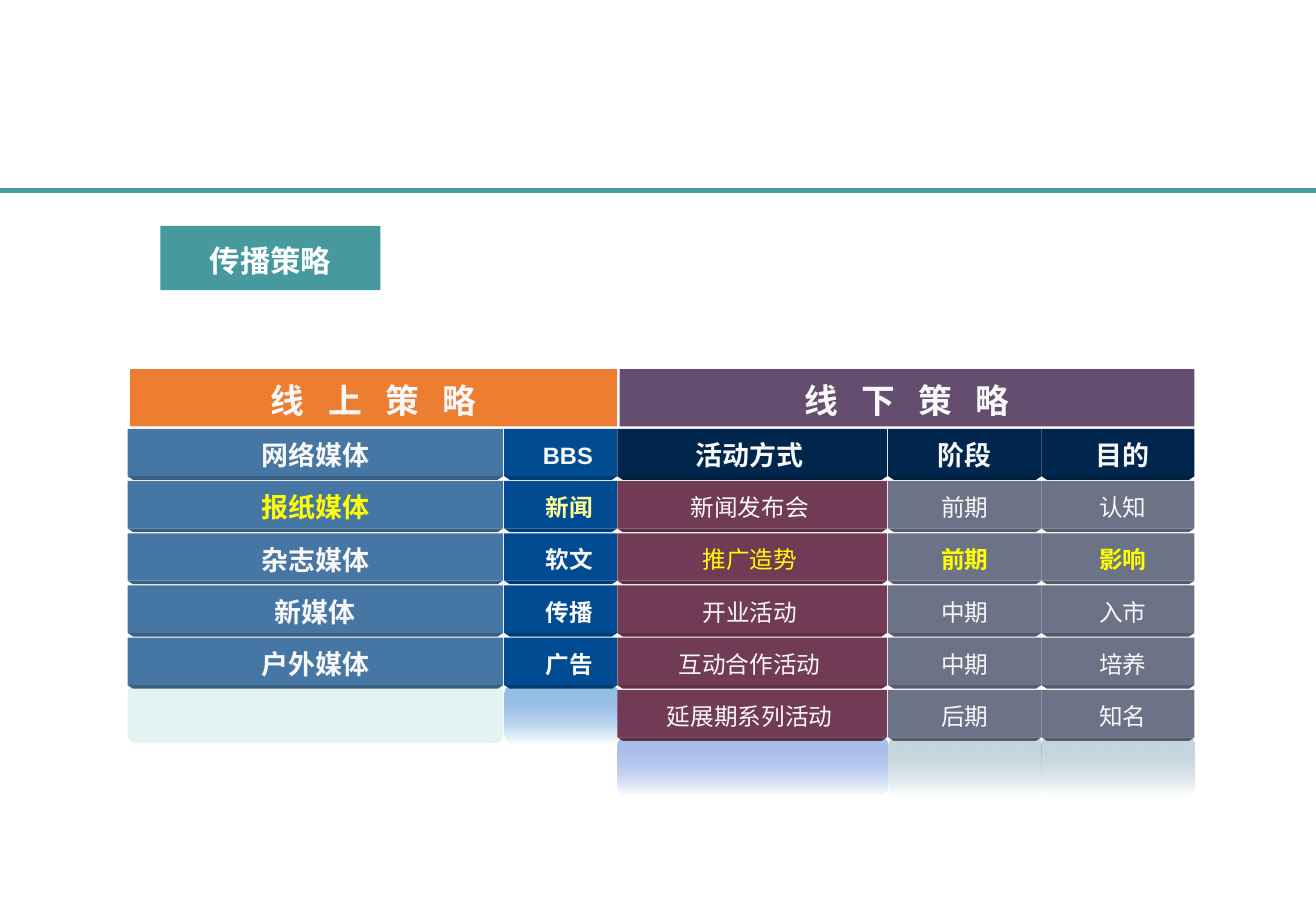
import pptx
import pptx.util
from dataclasses import dataclass
from lxml import etree
from pptx.dml.color import RGBColor
from pptx.enum.shapes import MSO_CONNECTOR, MSO_SHAPE
from pptx.enum.text import MSO_ANCHOR, PP_ALIGN
from pptx.oxml.ns import qn
from pptx.util import Inches

TEAL = RGBColor(0x46, 0x99, 0x9D)
ORANGE = RGBColor(0xED, 0x7D, 0x31)
PURPLE = RGBColor(0x64, 0x4D, 0x6F)
STEEL = RGBColor(0x46, 0x76, 0xA3)
BLUE = RGBColor(0x00, 0x4B, 0x92)
NAVY = RGBColor(0x00, 0x26, 0x4D)
WINE = RGBColor(0x72, 0x3B, 0x55)
SLATE = RGBColor(0x6D, 0x73, 0x87)
AQUA = RGBColor(0xBB, 0xE0, 0xE3)
AZURE = RGBColor(0x05, 0x63, 0xC1)
ROYAL = RGBColor(0x33, 0x66, 0xCC)
MIST = RGBColor(0x74, 0x9C, 0xB0)
WHITE = RGBColor(0xFF, 0xFF, 0xFF)
PALE = RGBColor(0xF8, 0xF8, 0xF8)
YELLOW = RGBColor(0xFF, 0xFF, 0x00)
CREAM = RGBColor(0xFF, 0xFF, 0x99)

CJK = "Noto Sans CJK SC"
ROW, FACE, EDGE = 0.43, 0.39, 0.03


@dataclass
class Column:
    left: float
    width: float
    words: list
    head: RGBColor
    body: RGBColor
    glow: RGBColor
    hot: int
    accent: RGBColor = YELLOW
    size: int = 14
    bold: bool = False
    shift: float = 0
    align: PP_ALIGN = PP_ALIGN.CENTER
    fade: bool = True


ONLINE = [
    Column(0, 3.09, ["网络媒体", "报纸媒体", "杂志媒体", "新媒体", "户外媒体"],
           STEEL, STEEL, AQUA, 1, size=16, bold=True, fade=False),
    Column(3.1, 0.93, ["BBS", "新闻", "软文", "传播", "广告"],
           BLUE, BLUE, AZURE, 1, CREAM, bold=True, shift=-0.2,
           align=PP_ALIGN.RIGHT),
]
OFFLINE = [
    Column(0, 2.22, ["活动方式", "新闻发布会", "推广造势", "开业活动",
                     "互动合作活动", "延展期系列活动"],
           NAVY, WINE, ROYAL, 2, shift=-0.04),
    Column(2.23, 1.26, ["阶段", "前期", "前期", "中期", "中期", "后期"],
           NAVY, SLATE, MIST, 2),
    Column(3.49, 1.26, ["目的", "认知", "影响", "入市", "培养", "知名"],
           NAVY, SLATE, MIST, 2, shift=0.04),
]


def add_block(slide, kind, box, color):
    shape = slide.shapes.add_shape(kind, *map(Inches, box))
    shape.shadow.inherit = False
    shape.line.fill.background()
    shape.fill.solid()
    shape.fill.fore_color.rgb = color
    return shape


def write(shape, text, size, color=PALE, bold=True, font="Arial",
          align=PP_ALIGN.CENTER, shift=0, drop=0.04):
    """Put text in a shape, moved right by shift and down by drop / 2."""
    frame = shape.text_frame
    frame.margin_left = Inches(max(shift, 0) * 2)
    frame.margin_right = Inches(max(-shift, 0))
    frame.margin_top, frame.margin_bottom = Inches(drop), 0
    frame.vertical_anchor = MSO_ANCHOR.MIDDLE
    frame.word_wrap = True
    frame.text = text
    line = frame.paragraphs[0]
    line.alignment = align
    run = line.runs[0]
    run.font.name, run.font.bold = font, bold
    run.font.size = pptx.util.Pt(size)
    run.font.color.rgb = color
    props = run.font._element
    latin = props.find(qn("a:latin"))
    east = etree.Element(qn("a:ea"), typeface=CJK)
    latin.addnext(east)
    return props


def add_bar(slide, box, text, color):
    """Add a wide heading with spaced, shadowed letters."""
    bar = add_block(slide, MSO_SHAPE.RECTANGLE, box, color)
    props = write(bar, text, 20, font=CJK)
    props.set("spc", "465")
    effects = etree.Element(qn("a:effectLst"))
    shade = etree.SubElement(effects, qn("a:outerShdw"), dist="25400",
                             dir="2700000")
    etree.SubElement(shade, qn("a:srgbClr"), val="000000")
    props.find(qn("a:solidFill")).addnext(effects)


def add_cell(slide, left, top, width, color):
    """Add a cell face with a darker slanted edge below it."""
    dark = RGBColor(*(int(part * 0.8) for part in color))
    edge = add_block(slide, MSO_SHAPE.TRAPEZOID,
                     (left, top + FACE, width, EDGE), dark)
    edge.rotation = 180
    edge.adjustments[0] = 1.5
    return add_block(slide, MSO_SHAPE.RECTANGLE,
                     (left, top, width, FACE), color)


def add_glow(slide, box, color, fade):
    """Add the translucent reflection under a column."""
    glow = add_block(slide, MSO_SHAPE.ROUNDED_RECTANGLE, box, color)
    if fade:
        glow.fill.gradient()
        glow.fill.gradient_angle = 270
        for stop, tint in zip(glow.fill.gradient_stops, (color, WHITE)):
            stop.color.rgb = tint
    first = next(glow._element.iter(qn("a:srgbClr")))
    etree.SubElement(first, qn("a:alpha"), val="40000")


def add_column(slide, left, top, col):
    add_glow(slide, (left, top + len(col.words) * ROW - 0.05, col.width, 0.49),
             col.glow, col.fade)
    for row, word in enumerate(col.words):
        first = row == 0
        hot = row == col.hot
        title = first and col.head == NAVY
        cell = add_cell(slide, left, top + row * ROW, col.width,
                        col.head if first else col.body)
        strong = col.bold or title or (hot and col.body == SLATE)
        write(cell, word, 16 if title else col.size,
              col.accent if hot else PALE, strong,
              align=col.align, shift=col.shift)


def add_group(slide, left, top, width, text, color, columns):
    """Add one strategy: its heading and the columns under it."""
    add_bar(slide, (left + 0.02, top, width - 0.02, 0.47), text, color)
    for col in columns:
        add_column(slide, left + col.left, top + 0.49, col)


def add_title(slide, left, top):
    rule = slide.shapes.add_connector(MSO_CONNECTOR.STRAIGHT, 0, Inches(top),
                                      Inches(10.83), Inches(top))
    rule.line.color.rgb = TEAL
    rule.line.width = pptx.util.Pt(3)
    etree.SubElement(rule._element.spPr, qn("a:effectLst"))
    label = add_block(slide, MSO_SHAPE.RECTANGLE,
                      (left, top + 0.29, 1.81, 0.53), TEAL)
    write(label, "传播策略", 18, WHITE, font=CJK)


def main():
    deck = pptx.Presentation()
    deck.slide_width, deck.slide_height = Inches(10.83), Inches(7.5)
    slide = deck.slides.add_slide(deck.slide_layouts[6])
    add_title(slide, 1.32, 1.57)
    add_group(slide, 1.05, 3.04, 4.03, "线 上 策 略", ORANGE, ONLINE)
    add_group(slide, 5.08, 3.04, 4.75, "线 下 策 略", PURPLE, OFFLINE)
    deck.save("out.pptx")


if __name__ == "__main__":
    main()
